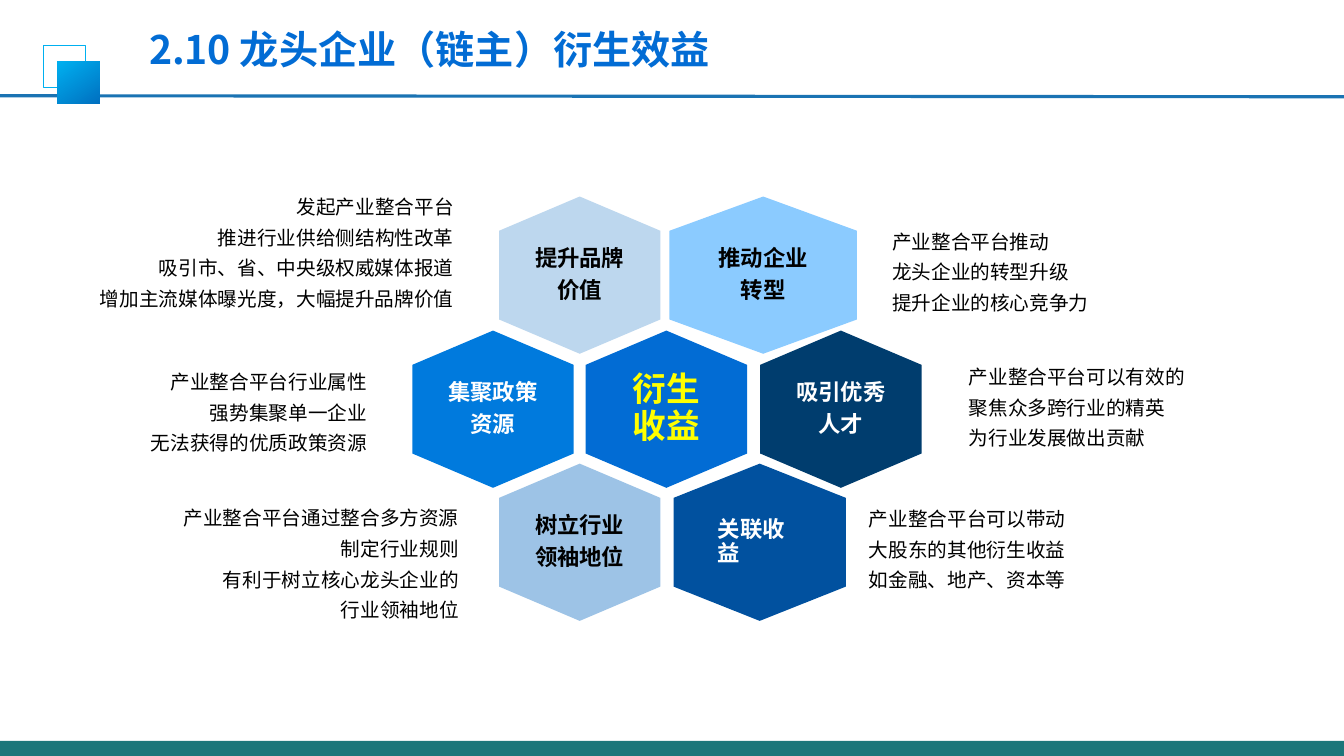
from pptx import Presentation
from pptx.dml.color import RGBColor
from pptx.enum.shapes import MSO_CONNECTOR, MSO_SHAPE
from pptx.enum.text import MSO_ANCHOR, PP_ALIGN
from pptx.oxml.ns import qn
from pptx.util import Inches, Pt
from lxml.etree import SubElement

FONT = "Noto Sans CJK SC"
COLORS = {
    "rule": "1A73B3", "outline": "00B0F0", "deep": "0070C0",
    "title": "026CD4", "footer": "1B767A", "black": "000000",
    "white": "FFFFFF", "yellow": "FFFF00", "sky": "8BCBFF",
    "mist": "BDD7EE", "core": "026CD4", "navy": "003D6E",
    "royal": "01519F", "steel": "9DC3E6", "azure": "007ADD",
}
ROW_TOPS = [1.95, 3.28, 4.6]
HEX_WIDTH, HEX_HEIGHT, SHOULDER = 1.6, 1.56, 0.34
TIGHT, WIDE = (0.3, 0.34), (0.44, 0.48)
HEXAGONS = [
    (6.64, 0, 1.86, "sky", "black", WIDE, ["推动企业", "转型"]),
    (4.95, 0, HEX_WIDTH, "mist", "black", TIGHT, ["提升品牌", "价值"]),
    (5.81, 1, HEX_WIDTH, "core", "yellow", WIDE, ["衍生收益"]),
    (7.54, 1, HEX_WIDTH, "navy", "white", TIGHT, ["吸引优秀", "人才"]),
    (6.68, 2, 1.71, "royal", "white", WIDE, ["关联收益"]),
    (4.95, 2, HEX_WIDTH, "steel", "black", TIGHT, ["树立行业", "领袖地位"]),
    (4.09, 1, HEX_WIDTH, "azure", "white", TIGHT, ["集聚政策", "资源"]),
]
NOTES = [
    ((0.76, 1.82, 3.84, 1.3), PP_ALIGN.RIGHT,
     ["发起产业整合平台", "推进行业供给侧结构性改革",
      "吸引市、省、中央级权威媒体报道", "增加主流媒体曝光度，大幅提升品牌价值"]),
    ((1.1, 3.59, 2.64, 0.93), PP_ALIGN.RIGHT,
     ["产业整合平台行业属性", "强势集聚单一企业", "无法获得的优质政策资源"]),
    ((1.38, 4.95, 3.27, 1.22), PP_ALIGN.RIGHT,
     ["产业整合平台通过整合多方资源", "制定行业规则",
      "有利于树立核心龙头企业的", "行业领袖地位"]),
    ((8.75, 2.2, 2.68, 0.93), PP_ALIGN.LEFT,
     ["产业整合平台推动", "龙头企业的转型升级", "提升企业的核心竞争力"]),
    ((9.51, 3.54, 2.68, 0.93), PP_ALIGN.LEFT,
     ["产业整合平台可以有效的", "聚焦众多跨行业的精英", "为行业发展做出贡献"]),
    ((8.52, 4.95, 2.9, 0.93), PP_ALIGN.LEFT,
     ["产业整合平台可以带动", "大股东的其他衍生收益", "如金融、地产、资本等"]),
]


def rgb(name):
    return RGBColor.from_string(COLORS[name])


def write_lines(frame, lines, color, font_format, paragraph_format):
    frame.word_wrap = True
    for index, line in enumerate(lines):
        paragraph = frame.paragraphs[0] if index == 0 else frame.add_paragraph()
        for key, value in paragraph_format.items():
            setattr(paragraph, key, value)
        run = paragraph.add_run()
        run.text = line
        for key, value in {"name": FONT, **font_format}.items():
            setattr(run.font, key, value)
        run.font.color.rgb = rgb(color)
        SubElement(run.font._element, qn("a:ea")).set("typeface", FONT)


def paint(shape, color):
    shape.shadow.inherit = False
    shape.fill.solid()
    shape.fill.fore_color.rgb = rgb(color)
    shape.line.fill.background()


def add_header(slide, left, top, width):
    rule = slide.shapes.add_connector(
        MSO_CONNECTOR.STRAIGHT, Inches(left), Inches(top + 0.95),
        Inches(left + width), Inches(top + 0.96))
    rule.line.color.rgb = rgb("rule")
    rule.line.width = Pt(2.25)
    SubElement(rule._element.spPr, qn("a:effectLst"))

    frame_square, solid_square = [
        slide.shapes.add_shape(MSO_SHAPE.RECTANGLE, Inches(left + x),
                               Inches(top + y), Inches(0.42), Inches(0.42))
        for x, y in [(0.43, 0.45), (0.57, 0.61)]]
    frame_square.shadow.inherit = False
    frame_square.fill.background()
    frame_square.line.color.rgb = rgb("outline")
    frame_square.line.width = Pt(0.75)
    paint(solid_square, "deep")
    solid_square.fill.gradient()
    solid_square.fill.gradient_angle = 125
    for stop, color, position in zip(solid_square.fill.gradient_stops,
                                     ["deep", "outline"], [0, 1]):
        stop.color.rgb = rgb(color)
        stop.position = position

    title = slide.shapes.add_textbox(Inches(left + 1.38), Inches(top + 0.25),
                                     Inches(8.52), Inches(0.52))
    write_lines(title.text_frame, ["2.10 龙头企业（链主）衍生效益"], "title",
                {"size": Pt(28), "bold": True}, {"line_spacing": 0.9})


def add_footer(slide, left, top, width, height):
    band = slide.shapes.add_shape(MSO_SHAPE.RECTANGLE, Inches(left),
                                  Inches(top), Inches(width), Inches(height))
    paint(band, "footer")


def add_hexagon(slide, left, top, width, fill, color, insets, lines):
    right, bottom, middle = left + width, top + HEX_HEIGHT, left + width / 2
    corners = [(right, top + SHOULDER), (right, bottom - SHOULDER),
               (middle, bottom), (left, bottom - SHOULDER),
               (left, top + SHOULDER)]
    builder = slide.shapes.build_freeform(Inches(middle), Inches(top))
    builder.add_line_segments([(Inches(x), Inches(y)) for x, y in corners])
    hexagon = builder.convert_to_shape()
    paint(hexagon, fill)
    frame = hexagon.text_frame
    side, end = map(Inches, insets)
    for key, value in {"margin_left": side, "margin_right": side,
                       "margin_top": end, "margin_bottom": end,
                       "vertical_anchor": MSO_ANCHOR.MIDDLE}.items():
        setattr(frame, key, value)
    size = 24 if fill == "core" else 16
    align = PP_ALIGN.LEFT if fill == "royal" else PP_ALIGN.CENTER
    write_lines(frame, lines, color, {"size": Pt(size), "bold": True},
                {"alignment": align, "line_spacing": 0.9,
                 "space_after": Pt(size * 0.35)})


def add_note(slide, box, align, lines):
    note = slide.shapes.add_textbox(*map(Inches, box))
    note.text_frame.vertical_anchor = MSO_ANCHOR.MIDDLE
    write_lines(note.text_frame, lines, "black", {"size": Pt(14)},
                {"alignment": align, "line_spacing": 1.3})


def main():
    deck = Presentation()
    deck.slide_width, deck.slide_height = Inches(13.33), Inches(7.5)
    slide = deck.slides.add_slide(deck.slide_layouts[6])
    add_header(slide, 0, 0, 13.33)
    add_footer(slide, 0, 7.35, 13.33, 0.15)
    for left, row, width, *style in HEXAGONS:
        add_hexagon(slide, left, ROW_TOPS[row], width, *style)
    for note in NOTES:
        add_note(slide, *note)
    deck.save("out.pptx")


if __name__ == "__main__":
    main()
